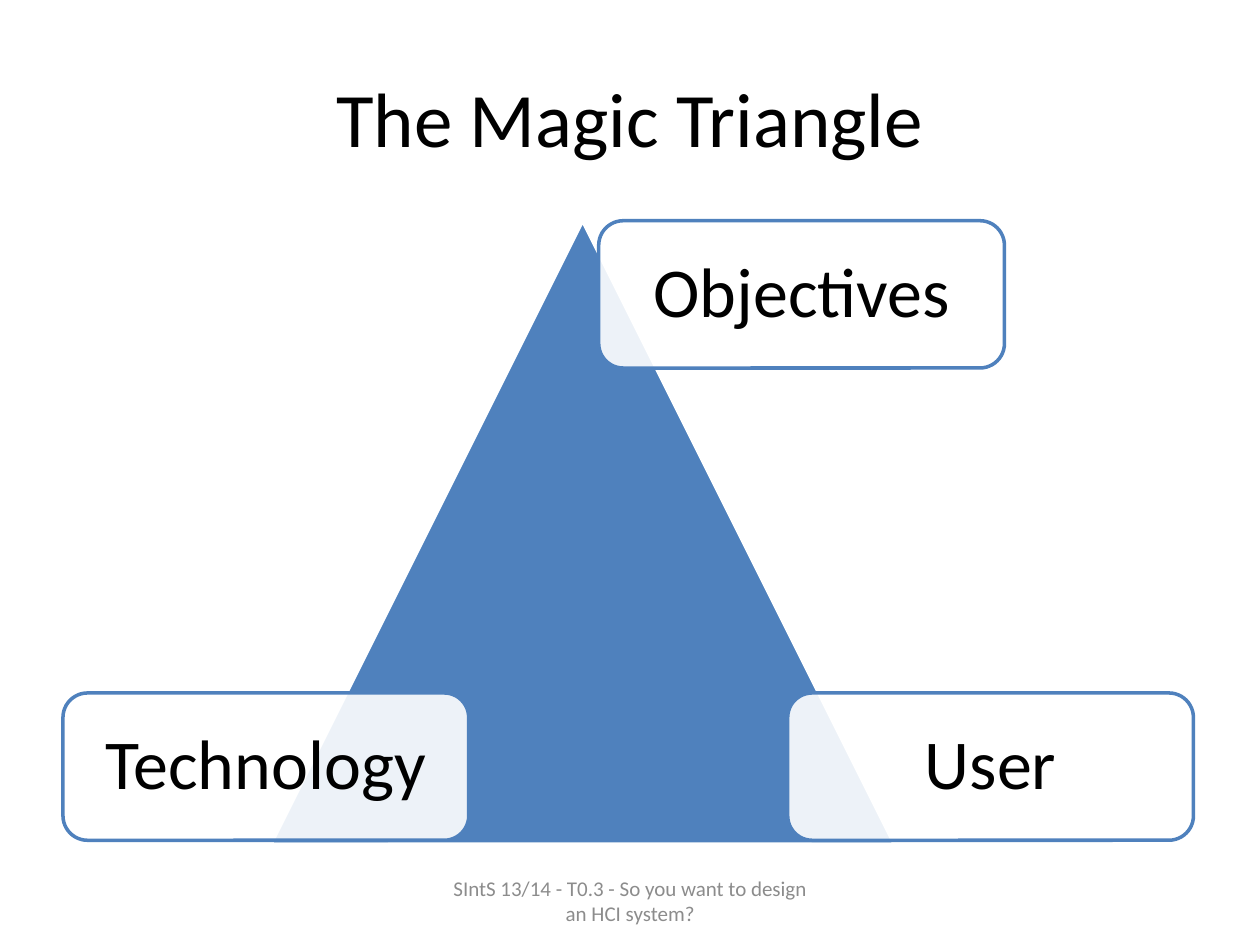
"""Build the Magic Triangle slide."""
from lxml import etree
from pptx import Presentation
from pptx.dml.color import RGBColor
from pptx.enum.shapes import MSO_SHAPE
from pptx.enum.text import MSO_ANCHOR, PP_ALIGN
from pptx.oxml.ns import qn
from pptx.util import Cm, Pt

TRIANGLE = MSO_SHAPE.ISOSCELES_TRIANGLE
ROUNDED = MSO_SHAPE.ROUNDED_RECTANGLE
MIDDLE = MSO_ANCHOR.MIDDLE
CENTER = PP_ALIGN.CENTER

BLUE = RGBColor(0x4F, 0x81, 0xBD)
WHITE = RGBColor(0xFF, 0xFF, 0xFF)
BLACK = RGBColor(0, 0, 0)
GREY = RGBColor(0x8C, 0x8C, 0x8C)

FONT = "Calibri"
CORNER_WIDTH, CORNER_HEIGHT = 8.18, 2.97
CORNERS = [("Objectives", 12.07, 4.45), ("Technology", 1.27, 13.97), ("User", 15.88, 13.97)]


def write_text(frame, wording, size, color):
    """Put one centred paragraph in a text frame."""
    frame.text = wording
    frame.word_wrap = True
    frame.vertical_anchor = MIDDLE
    paragraph = frame.paragraphs[0]
    paragraph.alignment = CENTER
    font = paragraph.runs[0].font
    font.name, font.size, font.color.rgb = FONT, Pt(size), color
    return paragraph


def add_label(slide, wording, box, size, color):
    """Add a text box at left, top, width, height in centimetres."""
    label = slide.shapes.add_textbox(*map(Cm, box))
    write_text(label.text_frame, wording, size, color)


def add_outlined(slide, preset, box, fill, line):
    """Add a filled preset shape with a 2 pt outline and no shadow."""
    shape = slide.shapes.add_shape(preset, *map(Cm, box))
    shape.shadow.inherit = False
    shape.fill.solid()
    shape.fill.fore_color.rgb = fill
    shape.line.color.rgb = line
    shape.line.width = Pt(2)
    return shape


def add_corner(slide, wording, left, top):
    """Add a translucent rounded card naming one corner of the triangle."""
    card = add_outlined(slide, ROUNDED, (left, top, CORNER_WIDTH, CORNER_HEIGHT), WHITE, BLUE)
    fill_color = card.fill._xPr.find(qn("a:solidFill"))[0]
    etree.SubElement(fill_color, qn("a:alpha"), val="90000")
    frame = card.text_frame
    frame.margin_left = frame.margin_right = Cm(0.5)
    frame.margin_top = frame.margin_bottom = Cm(0.5)
    write_text(frame, wording, 40, BLACK).line_spacing = 0.9


def main():
    """Build and save the slide."""
    deck = Presentation()
    deck.slide_width, deck.slide_height = Cm(25.4), Cm(19.05)
    slide = deck.slides.add_slide(deck.slide_layouts[6])
    add_label(slide, "The Magic Triangle", (1.27, 0.76, 22.86, 3.18), 44, BLACK)
    add_outlined(slide, TRIANGLE, (5.46, 4.45, 12.57, 12.57), BLUE, WHITE)
    for wording, left, top in CORNERS:
        add_corner(slide, wording, left, top)
    add_label(slide, "SIntS 13/14 - T0.3 - So you want to design an HCI system?",
              (8.68, 17.65, 8.05, 1.02), 12, GREY)
    deck.save("out.pptx")


if __name__ == "__main__":
    main()
